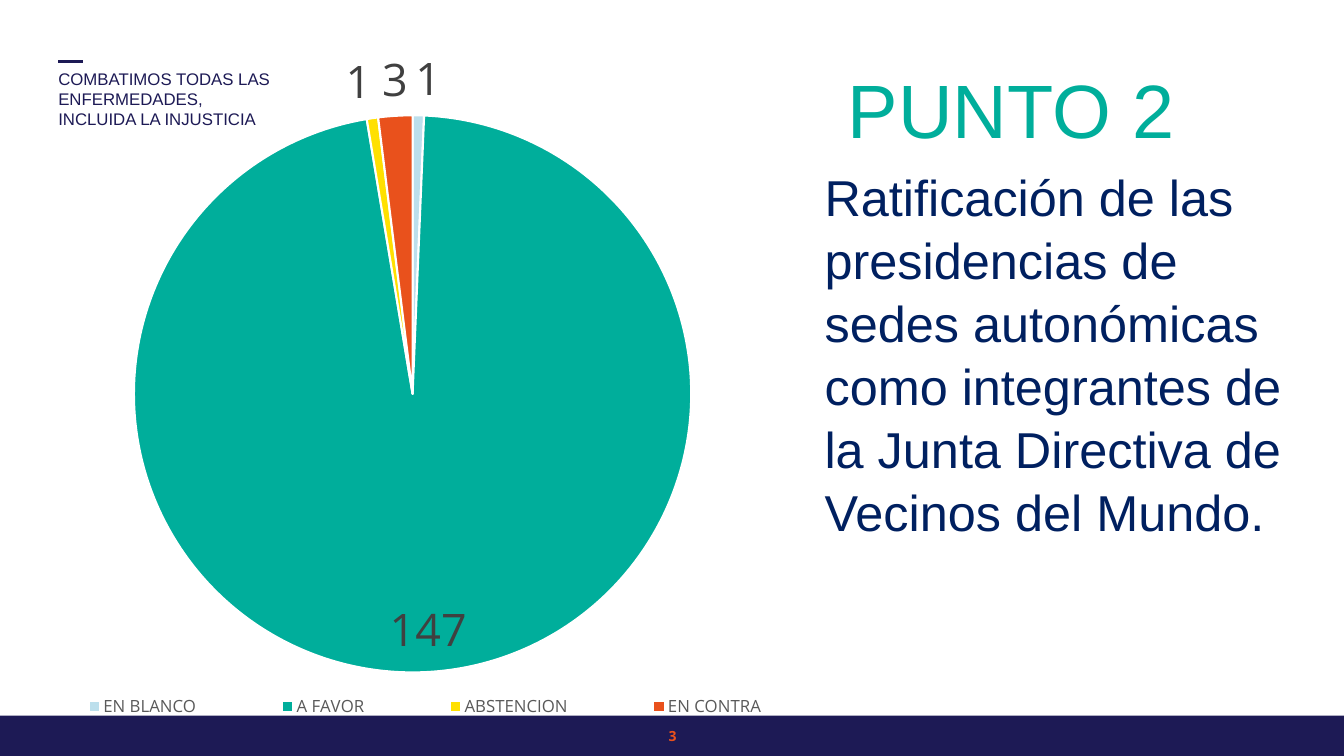
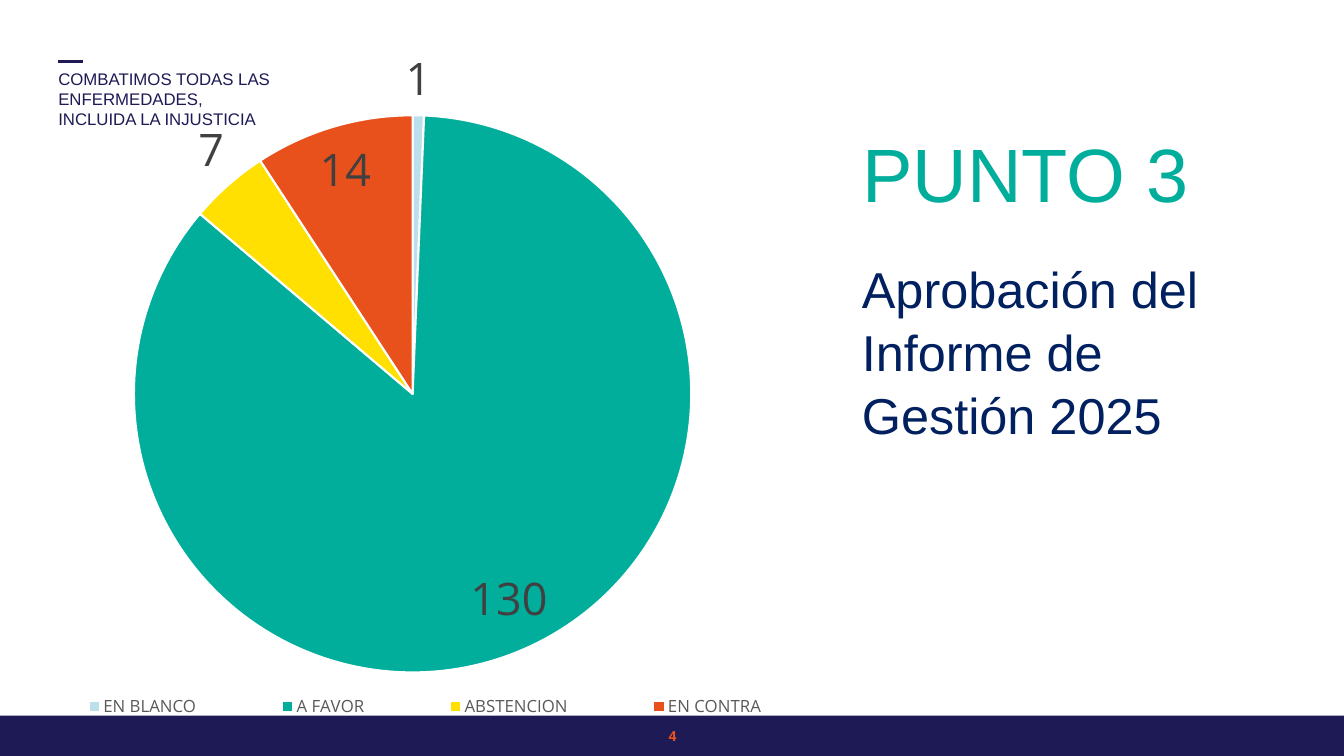
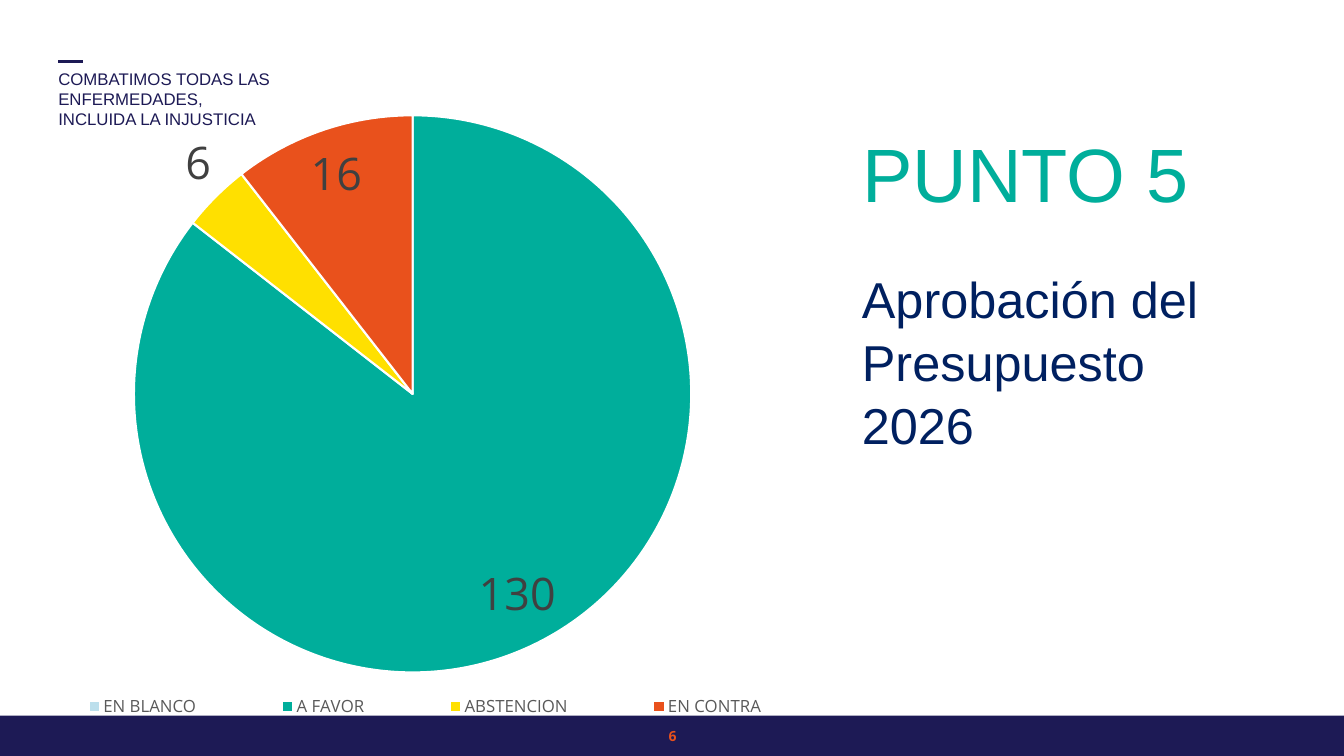
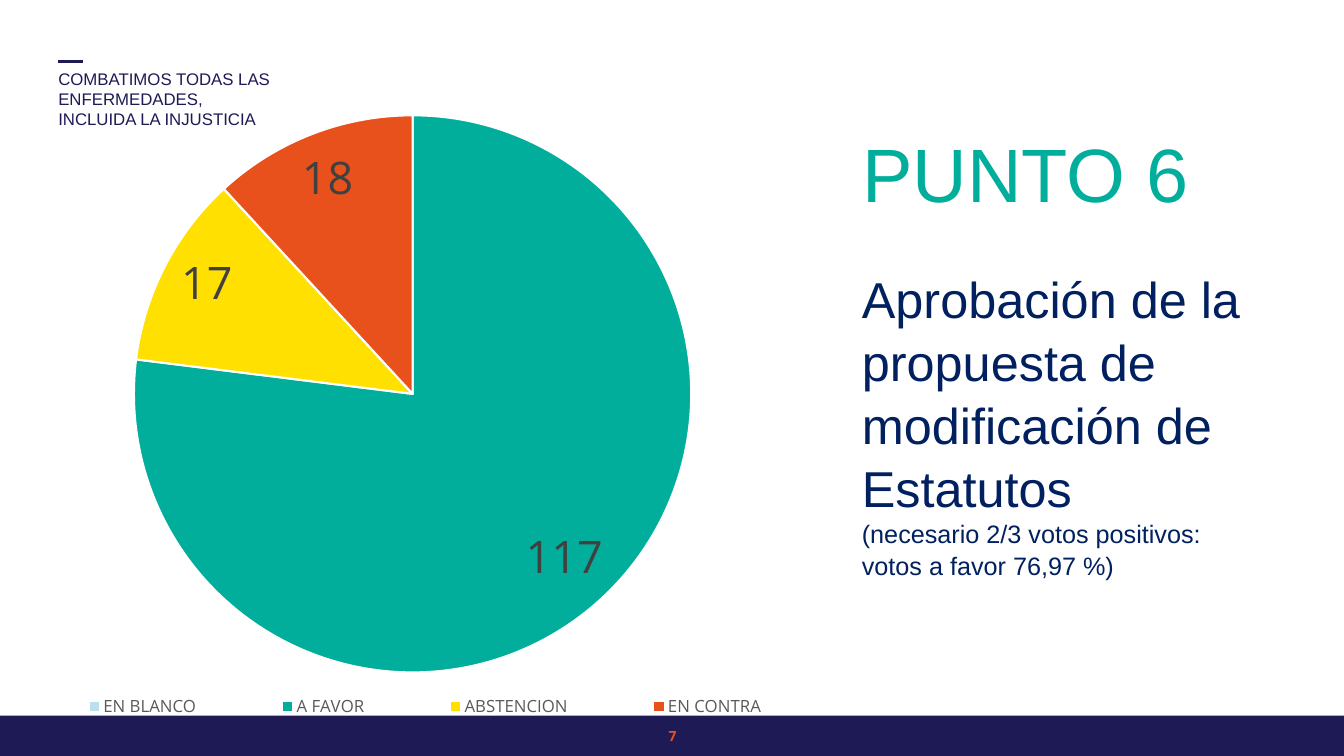
from lxml import etree
from pptx import Presentation
from pptx.chart.data import CategoryChartData
from pptx.dml.color import RGBColor
from pptx.enum.chart import XL_CHART_TYPE, XL_LABEL_POSITION, XL_LEGEND_POSITION
from pptx.enum.shapes import MSO_CONNECTOR, MSO_SHAPE
from pptx.enum.text import MSO_ANCHOR, MSO_AUTO_SIZE, PP_ALIGN
from pptx.oxml.ns import qn
from pptx.util import Inches, Pt

PIE = XL_CHART_TYPE.PIE
BEST_FIT = XL_LABEL_POSITION.BEST_FIT
LEGEND_LEFT = XL_LEGEND_POSITION.LEFT
STRAIGHT = MSO_CONNECTOR.STRAIGHT
RECTANGLE = MSO_SHAPE.RECTANGLE
TOP, MIDDLE = MSO_ANCHOR.TOP, MSO_ANCHOR.MIDDLE
NO_AUTOFIT = MSO_AUTO_SIZE.NONE
LEFT, CENTER = PP_ALIGN.LEFT, PP_ALIGN.CENTER

NAVY = RGBColor(0x1D, 0x1A, 0x55)
BLUE = RGBColor(0x00, 0x20, 0x60)
TEAL = RGBColor(0x00, 0xAE, 0x9B)
PALE_BLUE = RGBColor(0xBC, 0xDF, 0xEC)
YELLOW = RGBColor(0xFF, 0xE0, 0x00)
ORANGE = RGBColor(0xE9, 0x51, 0x1C)
DARK_GREY = RGBColor(0x40, 0x40, 0x40)
GREY = RGBColor(0x59, 0x59, 0x59)
WHITE = RGBColor(0xFF, 0xFF, 0xFF)

TEXT_FONT = "Arial"
CHART_FONT = "Open Sans"
SLOGAN = "COMBATIMOS TODAS LAS ENFERMEDADES,\vINCLUIDA LA INJUSTICIA"
VOTE_COLOURS = {
    "EN BLANCO": PALE_BLUE,
    "A FAVOR": TEAL,
    "ABSTENCION": YELLOW,
    "EN CONTRA": ORANGE,
}
TITLE_AT = (8.45, 1.21)

# Page number, title, title position, paragraphs (text, size), box, votes
POINTS = [
    (3, "PUNTO 2", (8.31, 0.57),
     [("Ratificación de las presidencias de sedes autonómicas como "
       "integrantes de la Junta Directiva de Vecinos del Mundo.", 36)],
     (8.08, 1.58, 4.87, 3.74), (1, 147, 1, 3)),
    (4, "PUNTO 3", TITLE_AT,
     [("Aprobación del Informe de Gestión 2025", 36)],
     (8.45, 2.49, 3.92, 1.92), (1, 130, 7, 14)),
    (6, "PUNTO 5", TITLE_AT,
     [("Aprobación del Presupuesto 2026", 36)],
     (8.45, 2.59, 3.92, 1.92), (0, 130, 6, 16)),
    (7, "PUNTO 6", TITLE_AT,
     [("Aprobación de la propuesta de modificación de Estatutos", 36),
      ("(necesario 2/3 votos positivos:", 18),
      ("votos a favor 76,97 %)", 18)],
     (8.45, 2.59, 4.63, 3.13), (0, 117, 17, 18)),
]


def place(sp, left, top, width, height):
    sp.left, sp.top = Inches(left), Inches(top)
    sp.width, sp.height = Inches(width), Inches(height)


def set_font(font, size, colour, name=TEXT_FONT, bold=False):
    font.name, font.size, font.bold = name, Pt(size), bold
    font.color.rgb = colour


def write(sp, paragraphs, colour, font=TEXT_FONT, bold=False,
          align=LEFT, anchor=TOP, spacing=None):
    """Fill a shape with (text, size) paragraphs."""
    tf = sp.text_frame
    tf.word_wrap = True
    tf.auto_size = NO_AUTOFIT
    tf.vertical_anchor = anchor
    for i, (text, size) in enumerate(paragraphs):
        p = tf.add_paragraph() if i else tf.paragraphs[0]
        p.text = text
        p.alignment = align
        p.line_spacing = spacing
        for r in p.runs:
            set_font(r.font, size, colour, font, bold)


def add_text(slide, box, paragraphs, colour, **text_format):
    sp = slide.shapes.add_textbox(*map(Inches, box))
    write(sp, paragraphs, colour, **text_format)


def add_frame(slide, number):
    """Draw the footer band, the slogan with its dash and the page number."""
    band = slide.shapes.add_shape(
        RECTANGLE, *map(Inches, (0, 7.1, 13.33, 0.4)))
    band.shadow.inherit = False
    band.fill.solid()
    band.fill.fore_color.rgb = NAVY
    band.line.fill.background()

    add_text(slide, (0.48, 0.63, 2.83, 0.71), [(SLOGAN, 12)], NAVY)
    dash = slide.shapes.add_connector(
        STRAIGHT, *map(Inches, (0.58, 0.61, 0.82, 0.61)))
    dash.line.color.rgb = NAVY
    dash.line.width = Pt(1.5)
    etree.SubElement(dash._element.spPr, qn("a:effectLst"))

    add_text(slide, (6.12, 7.17, 1.1, 0.27), [(str(number), 10)], ORANGE,
             font=CHART_FONT, bold=True, align=CENTER, anchor=MIDDLE)


def set_layout(parent, index, x, y, w, h, inner=False):
    """Fix a chart part at fractions of the chart area."""
    for old in parent.findall(qn("c:layout")):
        parent.remove(old)
    layout = etree.Element(qn("c:layout"))
    manual = etree.SubElement(layout, qn("c:manualLayout"))
    values = [("xMode", "edge"), ("yMode", "edge"),
              ("x", x), ("y", y), ("w", w), ("h", h)]
    if inner:
        values.insert(0, ("layoutTarget", "inner"))
    for tag, value in values:
        etree.SubElement(manual, qn(f"c:{tag}")).set("val", str(value))
    parent.insert(index, layout)


def add_vote_chart(slide, votes):
    data = CategoryChartData()
    data.categories = list(VOTE_COLOURS)
    data.add_series("Series 1", votes)
    chart = slide.shapes.add_chart(
        PIE, *map(Inches, (0, 0, 8.67, 8)), data).chart
    chart.has_title = False
    chart.font.name, chart.font.size = CHART_FONT, Pt(10)

    plot = chart.plots[0]
    plot.vary_by_categories = True
    for i, colour in enumerate(VOTE_COLOURS.values()):
        slice_format = plot.series[0].points[i].format
        slice_format.fill.solid()
        slice_format.fill.fore_color.rgb = colour
        slice_format.line.color.rgb = WHITE
        slice_format.line.width = Pt(1.5)

    plot.has_data_labels = True
    labels = plot.data_labels
    labels.show_value = True
    labels.show_percentage = False
    labels.position = BEST_FIT
    labels.number_format = "0;;;"  # hides zero votes
    labels.number_format_is_linked = False
    set_font(labels.font, 32, DARK_GREY, CHART_FONT)

    chart.has_legend = True
    legend = chart.legend
    legend.position = LEGEND_LEFT
    legend.include_in_layout = False
    set_font(legend.font, 12, GREY, CHART_FONT)
    set_layout(legend._element, 1, 0.01, 0.856, 0.953, 0.04)
    plot_area = chart._chartSpace.chart.plotArea
    set_layout(plot_area, 0, 0.137, 0.143, 0.67, 0.691, inner=True)


def add_point_slide(prs, number, title, title_at, paragraphs, box, votes):
    slide = prs.slides.add_slide(prs.slide_layouts[5])
    add_frame(slide, number)
    add_vote_chart(slide, votes)
    add_text(slide, box, paragraphs, BLUE, spacing=1.04)
    place(slide.shapes.title, *title_at, 4.13, 1.01)
    write(slide.shapes.title, [(title, 54)], TEAL)


def main():
    prs = Presentation()
    prs.slide_width, prs.slide_height = Inches(13.33), Inches(7.5)
    for point in POINTS:
        add_point_slide(prs, *point)
    prs.save("out.pptx")


if __name__ == "__main__":
    main()
